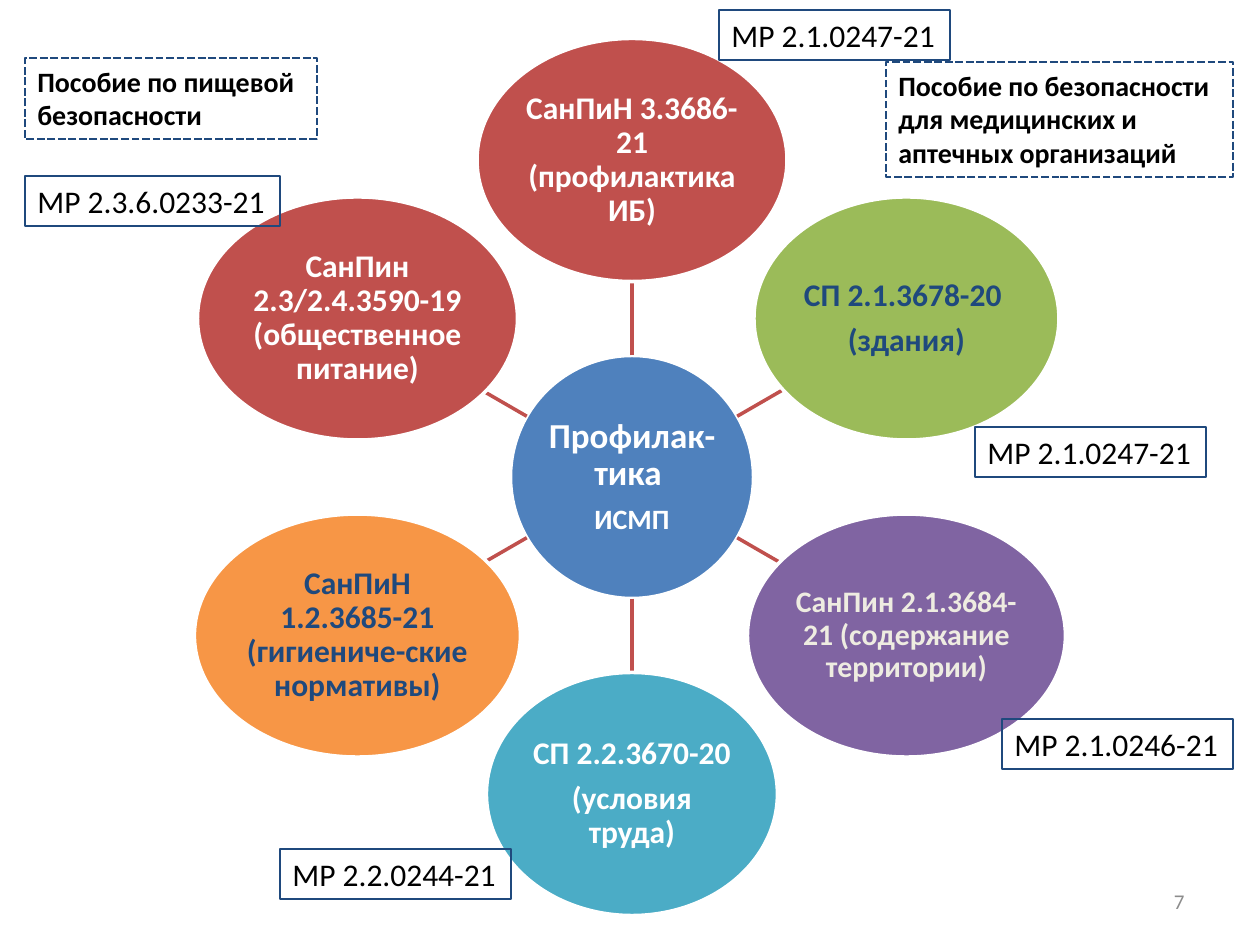
from dataclasses import dataclass
from math import cos, hypot, radians, sin

from lxml import etree
from pptx import Presentation
from pptx.dml.color import RGBColor
from pptx.enum.dml import MSO_LINE
from pptx.enum.shapes import MSO_CONNECTOR, MSO_SHAPE
from pptx.enum.text import MSO_ANCHOR, MSO_AUTO_SIZE, PP_ALIGN
from pptx.oxml.ns import qn
from pptx.util import Emu, Pt

ELLIPSE, RECTANGLE = MSO_SHAPE.OVAL, MSO_SHAPE.RECTANGLE
STRAIGHT, DASHED = MSO_CONNECTOR.STRAIGHT, MSO_LINE.SQUARE_DOT
TOP, MIDDLE = MSO_ANCHOR.TOP, MSO_ANCHOR.MIDDLE
LEFT, CENTER, RIGHT = PP_ALIGN.LEFT, PP_ALIGN.CENTER, PP_ALIGN.RIGHT
GROW = MSO_AUTO_SIZE.SHAPE_TO_FIT_TEXT
EMU_PER_PX = 914400 / 126


@dataclass(frozen=True)
class Theme:
    """Colours, font and type sizes of the slide."""
    font: str = "Calibri"
    white: str = "FFFFFF"
    black: str = "000000"
    cream: str = "EEECE1"
    gray: str = "8C8C8C"
    navy: str = "1F497D"
    blue: str = "4F81BD"
    red: str = "C0504D"
    green: str = "9BBB59"
    purple: str = "8064A2"
    teal: str = "4BACC6"
    orange: str = "F79646"
    title: int = 20
    body: int = 18
    compact: int = 17
    note: int = 16
    page: int = 12


THEME = Theme()
HUB_X, HUB_Y, HUB_SIZE = 632, 477, 243
ORBIT = 317

PETALS = [
    (310, THEME.red, THEME.white, THEME.body, ["СанПиН 3.3686-21 (профилактика ИБ)"]),
    (305, THEME.green, THEME.navy, THEME.body, ["СП 2.1.3678-20 ", "(здания)"]),
    (318, THEME.purple, THEME.cream, THEME.compact,
     ["СанПин 2.1.3684-21 (содержание территории)"]),
    (291, THEME.teal, THEME.white, THEME.body, ["СП 2.2.3670-20 ", "(условия труда)"]),
    (326, THEME.orange, THEME.navy, THEME.body,
     ["СанПиН 1.2.3685-21 (гигиениче-ские нормативы)"]),
    (320, THEME.red, THEME.white, THEME.body,
     ["СанПин 2.3/2.4.3590-19 (общественное питание)"]),
]

GUIDELINES = [
    (25, 176, 255, "МР 2.3.6.0233-21"),
    (1002, 719, 231, "МР 2.1.0246-21"),
    (975, 427, 231, "МР 2.1.0247-21"),
    (719, 10, 231, "МР 2.1.0247-21"),
    (280, 849, 231, "МР 2.2.0244-21"),
]

HANDBOOKS = [
    (25, 58, 292, 81, ["Пособие по пищевой", "безопасности"]),
    (886, 62, 347, 115,
     ["Пособие по безопасности", "для медицинских и", "аптечных организаций"]),
]


def px(*lengths):
    """Turn pixel lengths into EMU."""
    return [Emu(round(length * EMU_PER_PX)) for length in lengths]


def apply(target, formats):
    """Set every attribute named in formats on target."""
    for name, value in formats.items():
        setattr(target, name, value)


def write(frame, lines, sizes, color, bold, frame_format, paragraph_format):
    """Fill a text frame with one paragraph per line."""
    apply(frame, frame_format)
    for index, (line, size) in enumerate(zip(lines, sizes)):
        paragraph = frame.paragraphs[0] if index == 0 else frame.add_paragraph()
        apply(paragraph, paragraph_format)
        run = paragraph.add_run()
        run.text = line
        apply(run.font, {"name": THEME.font, "size": Pt(size), "bold": bold})
        run.font.color.rgb = RGBColor.from_string(color)


def add_circle(slide, center_x, center_y, width, fill, color, sizes, lines):
    """Draw a white-edged ellipse with centred bold text."""
    box = px(center_x - width / 2, center_y - HUB_SIZE / 2, width, HUB_SIZE)
    circle = slide.shapes.add_shape(ELLIPSE, *box)
    circle.shadow.inherit = False
    circle.fill.solid()
    circle.fill.fore_color.rgb = RGBColor.from_string(fill)
    circle.line.color.rgb = RGBColor.from_string(THEME.white)
    circle.line.width = Pt(2)
    inset = px(1)[0]
    frame_format = {"word_wrap": True, "vertical_anchor": MIDDLE}
    for side in ("left", "right", "top", "bottom"):
        frame_format[f"margin_{side}"] = inset
    paragraph_format = {"alignment": CENTER, "line_spacing": 0.9,
                        "space_after": Pt(round(sizes[0] * 0.35, 1))}
    write(circle.text_frame, lines, sizes, color, True, frame_format, paragraph_format)


def add_spoke(slide, angle, petal_width):
    """Join the hub edge to the petal edge along one ray."""
    dx, dy = cos(angle), sin(angle)
    petal_reach = 1 / hypot(dx / (petal_width / 2), dy / (HUB_SIZE / 2))
    ends = [HUB_SIZE / 2, ORBIT - petal_reach]
    points = [axis for reach in ends for axis in (HUB_X + reach * dx, HUB_Y + reach * dy)]
    spoke = slide.shapes.add_connector(STRAIGHT, *px(*points))
    spoke.line.color.rgb = RGBColor.from_string(THEME.red)
    spoke.line.width = Pt(2)
    etree.SubElement(spoke._element.spPr, qn("a:effectLst"))


def add_label(slide, box, lines, size, bold=False, dash=None):
    """Draw an unfilled navy frame around left-aligned text."""
    label = slide.shapes.add_shape(RECTANGLE, *px(*box))
    label.shadow.inherit = False
    label.fill.background()
    label.line.color.rgb = RGBColor.from_string(THEME.navy)
    apply(label.line, {"width": Pt(1.5), "dash_style": dash})
    frame_format = {"word_wrap": False, "auto_size": GROW, "vertical_anchor": TOP}
    write(label.text_frame, lines, [size] * len(lines), THEME.black, bold,
          frame_format, {"alignment": LEFT})


def add_page_number(slide, number):
    """Write the page number at the lower right."""
    page = slide.shapes.add_textbox(*px(903, 876, 294, 50))
    write(page.text_frame, [number], [THEME.page], THEME.gray, False,
          {"word_wrap": True, "vertical_anchor": MIDDLE}, {"alignment": RIGHT})


def main():
    """Build the slide and save it."""
    deck = Presentation()
    deck.slide_width, deck.slide_height = px(1260, 945)
    slide = deck.slides.add_slide(deck.slide_layouts[6])
    add_circle(slide, HUB_X, HUB_Y, HUB_SIZE, THEME.blue, THEME.white,
               [THEME.title, THEME.note], ["Профилак-тика ", "ИСМП"])
    for index, (width, fill, color, size, lines) in enumerate(PETALS):
        angle = radians(index * 360 / len(PETALS) - 90)
        add_spoke(slide, angle, width)
        add_circle(slide, HUB_X + ORBIT * cos(angle), HUB_Y + ORBIT * sin(angle),
                   width, fill, color, [size] * len(lines), lines)
    for left, top, width, text in GUIDELINES:
        add_label(slide, (left, top, width, 50), [text], THEME.body)
    for *box, lines in HANDBOOKS:
        add_label(slide, box, lines, THEME.note, bold=True, dash=DASHED)
    add_page_number(slide, "7")
    deck.save("out.pptx")


if __name__ == "__main__":
    main()
